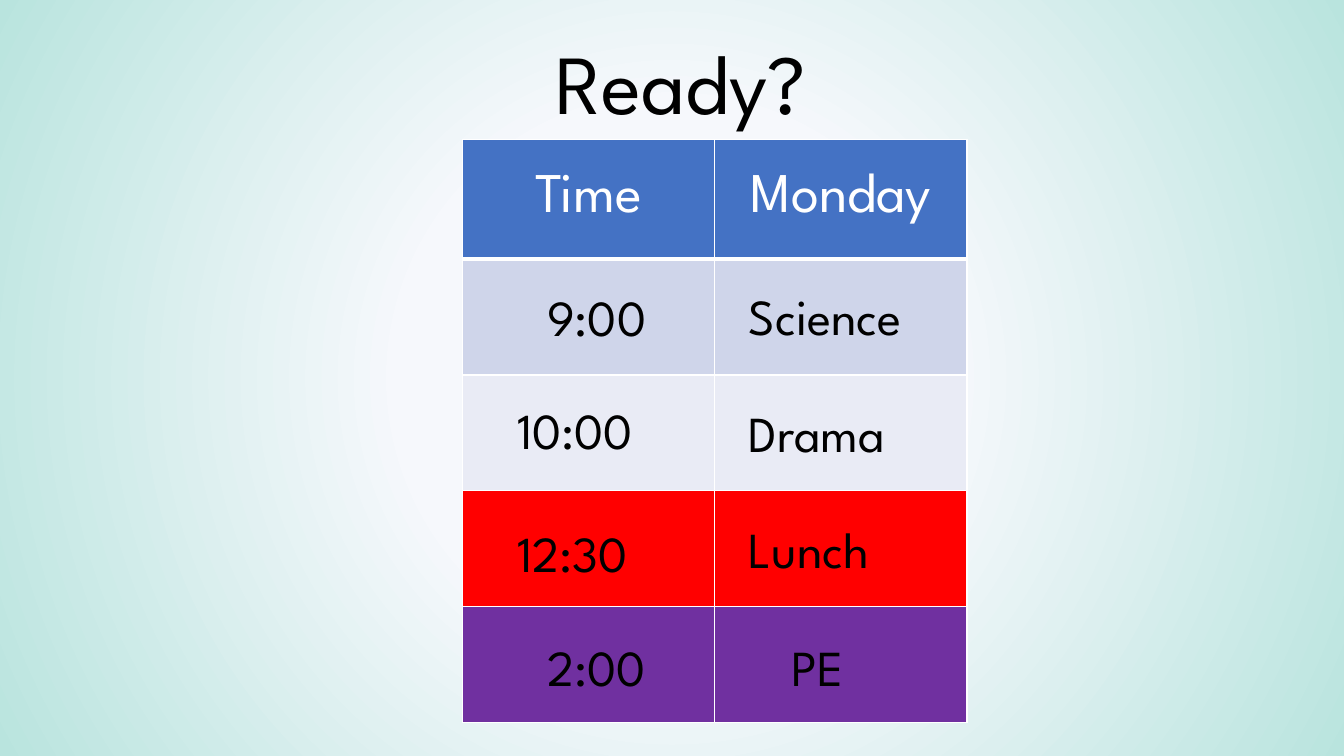
from dataclasses import dataclass

from pptx import Presentation
from pptx.dml.color import RGBColor
from pptx.enum.text import MSO_ANCHOR, MSO_AUTO_SIZE, PP_ALIGN
from pptx.oxml import parse_xml
from pptx.oxml.ns import nsdecls
from pptx.util import Inches, Pt

# Content
TITLE = "Ready?"
HEADINGS = ("Time", "Monday")
# text, left, top, width of each label
LESSONS = [
    (("9:00", 5.33, 2.79, 1.26), ("Science", 7.33, 2.78, 2.18)),
    (("10:00", 5.03, 3.91, 1.56), ("Drama", 7.33, 3.94, 1.83)),
    (("12:30", 5.03, 5.13, 1.56), ("Lunch", 7.33, 5.09, 1.71)),
    (("2:00", 5.33, 6.26, 1.26), ("PE", 7.75, 6.26, 0.88)),
]

# Table geometry
TABLE_LEFT, TABLE_TOP = 4.59, 1.38
COLUMN_WIDTH, HEADER_HEIGHT, LESSON_HEIGHT = 2.5, 1.19, 1.15
LABEL_HEIGHT = 0.71


@dataclass(frozen=True)
class Theme:
    font: str = "League Spartan"
    title_size: int = 60
    heading_size: int = 40
    label_size: int = 36
    ink: str = "000000"
    paper: str = "FFFFFF"
    row_fills: tuple = ("4472C4", "CFD5EA", "E9EBF5", "FF0000", "7030A0")
    glow: tuple = ((35, "F6F8FC"), (100, "B9E4DE"))


THEME = Theme()


def write_text(frame, text, size, color=THEME.ink, align=PP_ALIGN.LEFT):
    paragraph = frame.paragraphs[0]
    paragraph.alignment = align
    run = paragraph.add_run()
    run.text = text
    run.font.name = THEME.font
    run.font.size = Pt(size)
    run.font.color.rgb = RGBColor.from_string(color)


def paint_background(slide):
    fill = slide.background.fill
    fill.solid()
    solid = slide.element.cSld.bg.bgPr[0]
    stops = "".join(
        f'<a:gs pos="{position * 1000}"><a:srgbClr val="{color}"/></a:gs>'
        for position, color in THEME.glow
    )
    gradient = parse_xml(
        f'<a:gradFill rotWithShape="1" {nsdecls("a")}><a:gsLst>{stops}</a:gsLst>'
        '<a:path path="circle"><a:fillToRect l="50000" t="50000" r="50000" b="50000"/>'
        "</a:path></a:gradFill>"
    )
    solid.getparent().replace(solid, gradient)


def format_cell(cell, row):
    """Set white borders, thick under the header, and the row's fill."""
    properties = cell._tc.get_or_add_tcPr()
    widths = {"L": 1, "R": 1, "T": 3 if row == 1 else 1, "B": 3 if row == 0 else 1}
    for side, width in widths.items():
        properties.append(parse_xml(
            f'<a:ln{side} w="{Pt(width)}" {nsdecls("a")}><a:solidFill>'
            f'<a:srgbClr val="{THEME.paper}"/></a:solidFill></a:ln{side}>'
        ))
    cell.fill.solid()
    cell.fill.fore_color.rgb = RGBColor.from_string(THEME.row_fills[row])
    cell.vertical_anchor = MSO_ANCHOR.MIDDLE


def add_timetable(slide):
    heights = [HEADER_HEIGHT] + [LESSON_HEIGHT] * len(LESSONS)
    table = slide.shapes.add_table(
        len(heights), len(HEADINGS), Inches(TABLE_LEFT), Inches(TABLE_TOP),
        Inches(COLUMN_WIDTH * len(HEADINGS)), Inches(sum(heights)),
    ).table
    for row, height in enumerate(heights):
        table.rows[row].height = Inches(height)
        for cell in table.rows[row].cells:
            format_cell(cell, row)
    for column, heading in enumerate(HEADINGS):
        write_text(table.cell(0, column).text_frame, heading, THEME.heading_size,
                   color=THEME.paper, align=PP_ALIGN.CENTER)


def add_label(slide, text, left, top, width):
    box = slide.shapes.add_textbox(
        Inches(left), Inches(top), Inches(width), Inches(LABEL_HEIGHT))
    box.text_frame.word_wrap = False
    box.text_frame.auto_size = MSO_AUTO_SIZE.SHAPE_TO_FIT_TEXT
    write_text(box.text_frame, text, THEME.label_size)


def main():
    presentation = Presentation()
    presentation.slide_width = Inches(13.33)
    presentation.slide_height = Inches(7.5)
    slide = presentation.slides.add_slide(presentation.slide_layouts[5])
    paint_background(slide)

    # Title
    title = slide.shapes.title
    title.left, title.top = Inches(0.16), Inches(0.25)
    title.width, title.height = Inches(13.18), Inches(1.11)
    title.text_frame.vertical_anchor = MSO_ANCHOR.TOP
    title.text_frame.auto_size = MSO_AUTO_SIZE.NONE
    write_text(title.text_frame, TITLE, THEME.title_size, align=PP_ALIGN.CENTER)

    # Timetable and the labels laid over it
    add_timetable(slide)
    for lesson in LESSONS:
        for label in lesson:
            add_label(slide, *label)

    presentation.save("out.pptx")


if __name__ == "__main__":
    main()
